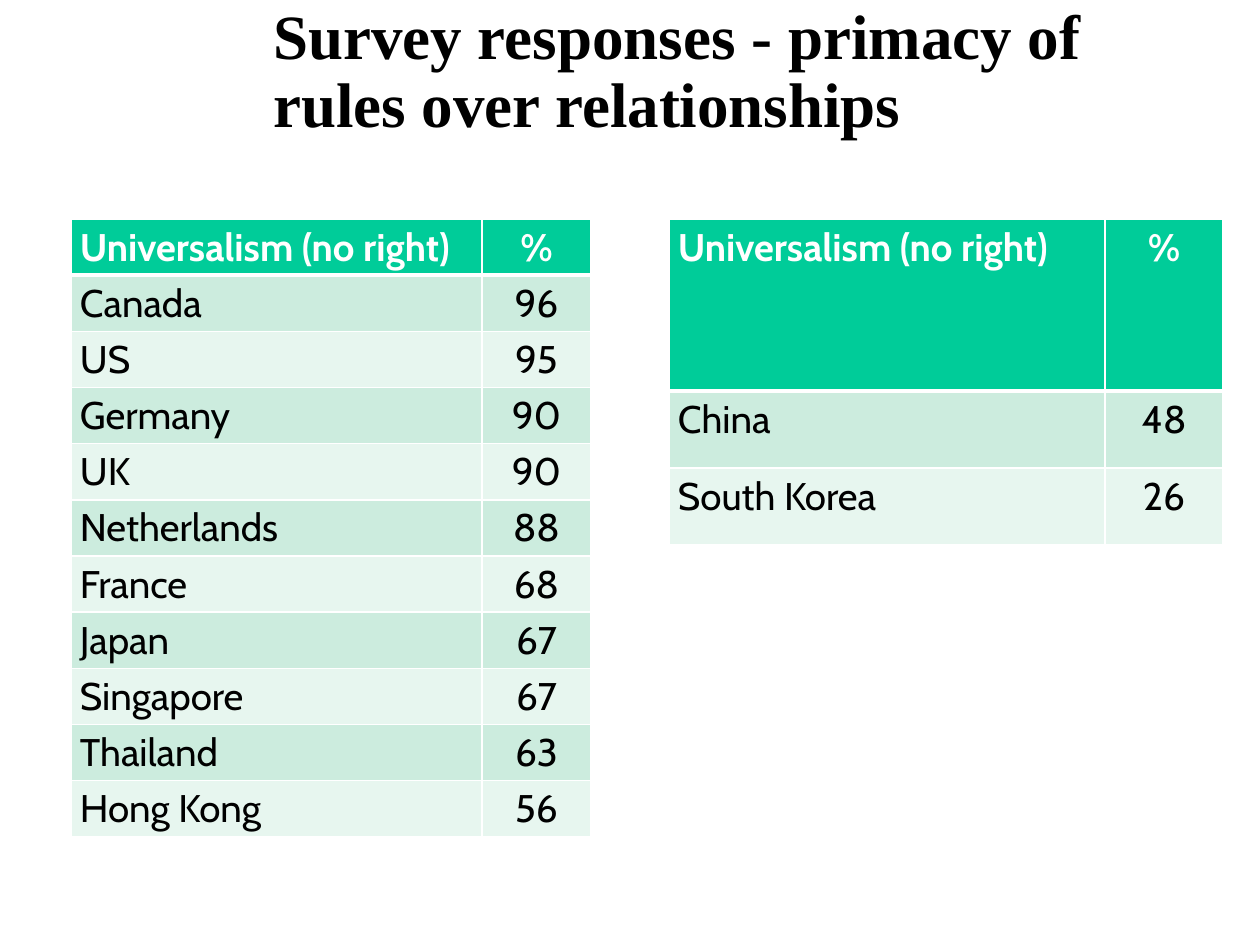
from lxml import etree
from pptx import Presentation
from pptx.enum import text
from pptx.oxml import ns
from pptx.util import Emu, Pt

PX = 914400 // 126  # one pixel in EMU
COLOURS = {
    "ink": "000000",
    "white": "FFFFFF",
    "header": "00CC99",
    "odd_row": "CCECDE",
    "even_row": "E7F6EF",
}
TITLE = "Survey responses - primacy of rules over relationships"
HEADINGS = ("Universalism (no right)", "%")
HIGH_SCORES = [
    ("Canada", 96), ("US", 95), ("Germany", 90), ("UK", 90),
    ("Netherlands", 88), ("France", 68), ("Japan", 67),
    ("Singapore", 67), ("Thailand", 63), ("Hong Kong", 56),
]
LOW_SCORES = [("China", 48), ("South Korea", 26)]


def px(count):
    return Emu(count * PX)


def rgb(name):
    from_hex = text_colour.from_string
    return from_hex(COLOURS[name])


def add_run(paragraph, words, font_name, size, colour, bold):
    run = paragraph.add_run()
    run.text = words
    run.font.name = font_name
    run.font.size = Pt(size)
    run.font.bold = bold
    run.font.color.rgb = rgb(colour)


def add_title(slide):
    box = slide.shapes.add_textbox(px(261), px(0), px(861), px(147))
    frame = box.text_frame
    frame.word_wrap = True
    frame.vertical_anchor = text.MSO_ANCHOR.MIDDLE
    heading = frame.paragraphs[0]
    heading.line_spacing = 0.9
    add_run(heading, TITLE, "Times New Roman", 36, "ink", True)


def set_borders(cell, bottom_width):
    """Give a cell white edges, placed before its fill as the schema asks."""
    properties = cell._tc.get_or_add_tcPr()
    widths = {"lnL": 1, "lnR": 1, "lnT": 1, "lnB": bottom_width}
    for position, (side, width) in enumerate(widths.items()):
        line = etree.Element(ns.qn(f"a:{side}"), w=str(Pt(width)))
        fill = etree.SubElement(line, ns.qn("a:solidFill"))
        etree.SubElement(fill, ns.qn("a:srgbClr"), val=COLOURS["white"])
        properties.insert(position, line)


def fill_cell(cell, words, row, column):
    is_header = row == 0
    band = "header" if is_header else "odd_row" if row % 2 else "even_row"
    cell.fill.solid()
    cell.fill.fore_color.rgb = rgb(band)
    cell.margin_left = cell.margin_right = px(9)
    cell.margin_top = cell.margin_bottom = px(5)
    paragraph = cell.text_frame.paragraphs[0]
    if column == 1:
        paragraph.alignment = text.PP_ALIGN.CENTER
    add_run(paragraph, words, "Cabin", 22,
            "white" if is_header else "ink", is_header)
    set_borders(cell, 3 if is_header else 1)


def add_score_table(slide, left, column_widths, header_height, row_height, scores):
    rows = [HEADINGS, *scores]
    heights = [header_height] + [row_height] * len(scores)
    table = slide.shapes.add_table(
        len(rows), len(HEADINGS), px(left), px(219),
        px(sum(column_widths)), px(sum(heights))).table
    for column, width in zip(table.columns, column_widths):
        column.width = px(width)
    for row, (values, height) in enumerate(zip(rows, heights)):
        table.rows[row].height = px(height)
        for column, value in enumerate(values):
            fill_cell(table.cell(row, column), str(value), row, column)


def main():
    deck = Presentation()
    deck.slide_width, deck.slide_height = px(1260), px(945)
    slide = deck.slides.add_slide(deck.slide_layouts[6])

    add_title(slide)
    # Countries scoring above half, then those below
    add_score_table(slide, 71, (411, 109), 55, 55, HIGH_SCORES)
    add_score_table(slide, 669, (436, 118), 172, 77, LOW_SCORES)

    deck.save("out.pptx")


from pptx.dml.color import RGBColor as text_colour

if __name__ == "__main__":
    main()
